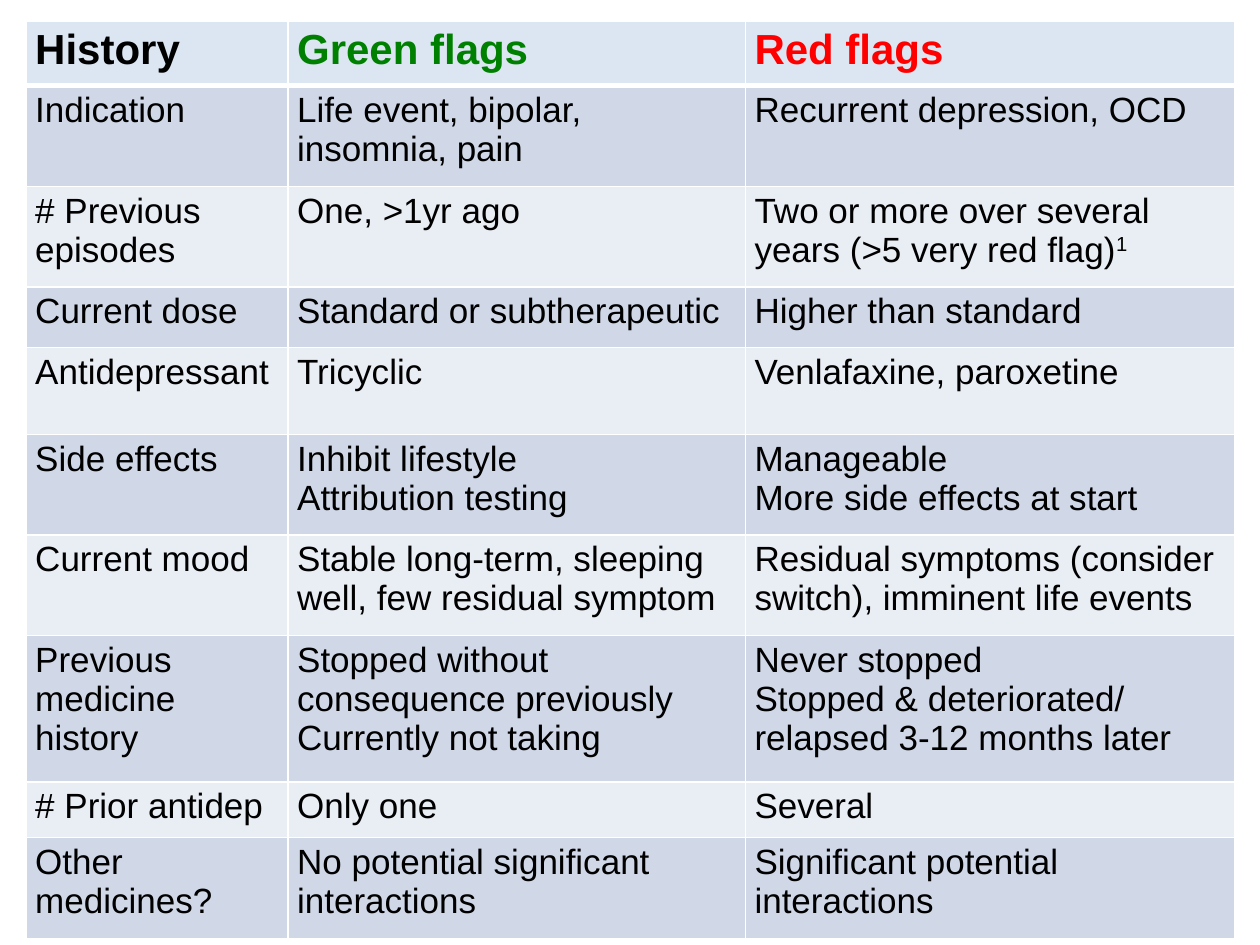
from dataclasses import dataclass

from lxml.etree import SubElement
from pptx import Presentation
from pptx.dml.color import RGBColor
from pptx.oxml.ns import qn
from pptx.util import Cm, Pt

BLACK = RGBColor(0x00, 0x00, 0x00)
WHITE = RGBColor(0xFF, 0xFF, 0xFF)
GREEN = RGBColor(0x00, 0x80, 0x00)
RED = RGBColor(0xFF, 0x00, 0x00)
HEADER_FILL = RGBColor(0xDC, 0xE6, 0xF2)
BAND_FILLS = (RGBColor(0xE9, 0xED, 0xF4), RGBColor(0xD0, 0xD8, 0xE8))

HEADER_COLORS = (BLACK, GREEN, RED)
COL_WIDTHS = (5.28, 9.22, 9.86)
MARGINS = {"margin_left": Cm(0.18), "margin_right": Cm(0.18),
           "margin_top": Cm(0.1), "margin_bottom": Cm(0.1)}
SUPERSCRIPT = "^"  # what follows this mark in a line is raised


@dataclass(frozen=True)
class FlagRow:
    height: float
    history: str
    green: str
    red: str


ROWS = (
    FlagRow(1.3, "History", "Green flags", "Red flags"),
    FlagRow(2.03, "Indication", "Life event, bipolar, insomnia, pain",
            "Recurrent depression, OCD"),
    FlagRow(2.03, "# Previous episodes", "One, >1yr ago",
            "Two or more over several years (>5 very red flag)^1"),
    FlagRow(1.22, "Current dose", "Standard or subtherapeutic",
            "Higher than standard"),
    FlagRow(1.75, "Antidepressant", "Tricyclic", "Venlafaxine, paroxetine"),
    FlagRow(2.03, "Side effects", "Inhibit lifestyle\nAttribution testing",
            "Manageable\nMore side effects at start"),
    FlagRow(2.03, "Current mood",
            "Stable long-term, sleeping well, few residual symptom",
            "Residual symptoms (consider switch), imminent life events"),
    FlagRow(2.95, "Previous medicine history",
            "Stopped without consequence previously\nCurrently not taking",
            "Never stopped\n"
            "Stopped & deteriorated/ relapsed 3-12 months later"),
    FlagRow(1.12, "# Prior antidep", "Only one", "Several"),
    FlagRow(2.03, "Other medicines?", "No potential significant interactions",
            "Significant potential interactions"),
)


def set_borders(cell, top: float, bottom: float) -> None:
    tc_pr = cell._tc.get_or_add_tcPr()
    widths = {"lnL": 1, "lnR": 1, "lnT": top, "lnB": bottom}
    for tag, width in widths.items():
        ln = SubElement(tc_pr, qn(f"a:{tag}"), w=str(Pt(width)))
        fill = SubElement(ln, qn("a:solidFill"))
        SubElement(fill, qn("a:srgbClr"), val=str(WHITE))


def write_text(cell, text: str, font: dict) -> None:
    tf = cell.text_frame
    for i, line in enumerate(text.split("\n")):
        p = tf.add_paragraph() if i else tf.paragraphs[0]
        for j, part in enumerate(line.split(SUPERSCRIPT)):
            r = p.add_run()
            r.text = part
            for name, value in font.items():
                setattr(r.font, name, value)
            r.font.color.rgb = font_color(cell, font)
            if j:
                r._r.get_or_add_rPr().set("baseline", "30000")


def font_color(cell, font: dict) -> RGBColor:
    """Only the bold header cells carry a colour of their own."""
    if not font["bold"]:
        return BLACK
    return HEADER_COLORS[cell._tc.col_idx]


def fill_row(table, index: int, row: FlagRow) -> None:
    is_header = index == 0
    font = {"name": "Arial", "size": Pt(24 if is_header else 20),
            "bold": is_header}
    table.rows[index].height = Cm(row.height)
    for col, text in enumerate((row.history, row.green, row.red)):
        cell = table.cell(index, col)
        for name, value in MARGINS.items():
            setattr(cell, name, value)
        set_borders(cell, top=3 if index == 1 else 1,
                    bottom=3 if is_header else 1)
        cell.fill.solid()
        cell.fill.fore_color.rgb = (
            HEADER_FILL if is_header else BAND_FILLS[index % 2])
        write_text(cell, text, font)


def main() -> None:
    prs = Presentation()
    prs.slide_width, prs.slide_height = Cm(25.4), Cm(19.05)
    s = prs.slides.add_slide(prs.slide_layouts[6])
    table = s.shapes.add_table(
        len(ROWS), len(COL_WIDTHS), Cm(0.53), Cm(0.43),
        Cm(sum(COL_WIDTHS)), Cm(sum(row.height for row in ROWS))).table
    for column, width in zip(table.columns, COL_WIDTHS):
        column.width = Cm(width)
    for index, row in enumerate(ROWS):
        fill_row(table, index, row)
    prs.save("out.pptx")


if __name__ == "__main__":
    main()
